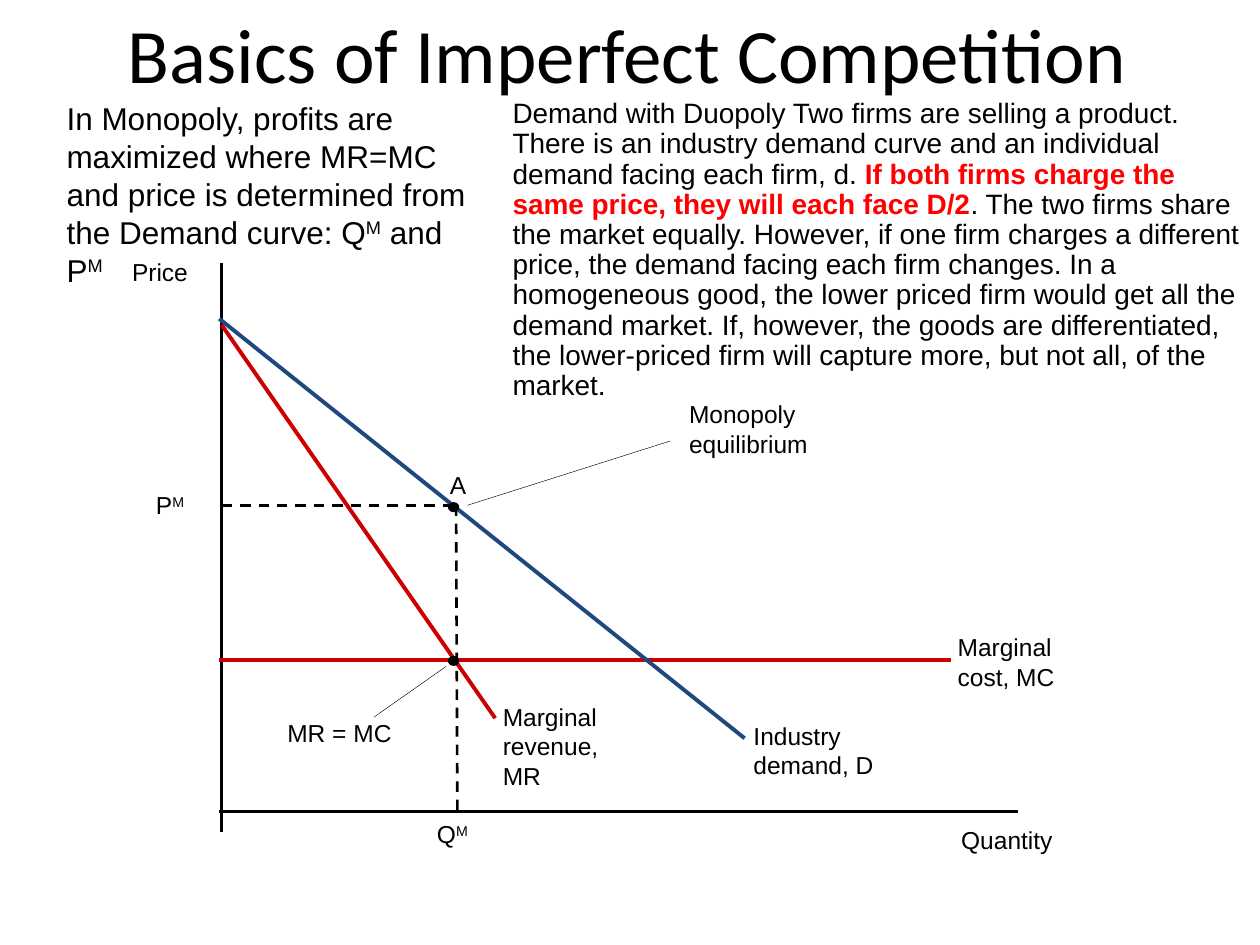
import pptx
import pptx.util
import pptx.dml.color
import pptx.enum.dml
import pptx.enum.shapes
import pptx.enum.text
import pptx.oxml

COLORS = {"ink": "000000", "paper": "FFFFFF", "cost": "CC0000",
          "demand": "1F497D", "accent": "FF0000"}
ALIGN = pptx.enum.text.PP_ALIGN
ANCHOR = pptx.enum.text.MSO_ANCHOR
SHAPE = pptx.enum.shapes.MSO_SHAPE
SUPERSCRIPT = {"baseline": 30000}


def color(name):
    return pptx.dml.color.RGBColor.from_string(COLORS[name])


def write(frame, text, size=14, font="Arial", align=ALIGN.LEFT, anchor=ANCHOR.TOP,
          inset=(0, 0), spacing=None):
    frame.word_wrap = True
    frame.vertical_anchor = anchor
    frame.margin_left = frame.margin_right = pptx.util.Inches(inset[0])
    frame.margin_top = frame.margin_bottom = pptx.util.Inches(inset[1])
    paragraph = frame.paragraphs[0]
    paragraph.alignment = align
    if spacing:
        paragraph.line_spacing = spacing
    pieces = [(text, {})] if isinstance(text, str) else text
    for words, style in pieces:
        run = paragraph.add_run()
        run.text = words
        run.font.name = font
        run.font.size = pptx.util.Pt(size)
        run.font.bold = style.get("bold", False)
        run.font.color.rgb = color(style.get("color", "ink"))
        if "baseline" in style:
            run.font._element.set("baseline", str(style["baseline"]))


class Canvas:
    padding = (0.1, 0.05)

    def __init__(self, presentation):
        self.width = presentation.slide_width
        self.height = presentation.slide_height
        self.slide = presentation.slides.add_slide(presentation.slide_layouts[6])

    def across(self, percent):
        return round(self.width * percent / 100)

    def down(self, percent):
        return round(self.height * percent / 100)

    def area(self, left, top, width, height):
        return self.across(left), self.down(top), self.across(width), self.down(height)

    def text(self, box, text, **style):
        shape = self.slide.shapes.add_textbox(*self.area(*box))
        write(shape.text_frame, text, inset=self.padding, **style)

    def block(self, kind, box, fill, line, weight):
        shape = self.slide.shapes.add_shape(kind, *self.area(*box))
        shape.shadow.inherit = False
        if fill:
            shape.fill.solid()
            shape.fill.fore_color.rgb = color(fill)
        else:
            shape.fill.background()
        if line:
            shape.line.color.rgb = color(line)
            shape.line.width = pptx.util.Pt(weight)
        else:
            shape.line.fill.background()
        return shape

    def label(self, box, text, fill="paper", line="paper", weight=0.75, **style):
        shape = self.block(SHAPE.RECTANGLE, box, fill, line, weight)
        write(shape.text_frame, text, **style)

    def dot(self, left, top):
        self.block(SHAPE.OVAL, (left, top, 0.8, 0.93), "ink", "ink", 0.75)

    def line(self, start, end, weight=1.5, stroke="ink", dashed=False):
        connector = self.slide.shapes.add_connector(
            pptx.enum.shapes.MSO_CONNECTOR.STRAIGHT,
            self.across(start[0]), self.down(start[1]),
            self.across(end[0]), self.down(end[1]))
        connector.line.color.rgb = color(stroke)
        connector.line.width = pptx.util.Pt(weight)
        if dashed:
            connector.line.dash_style = pptx.enum.dml.MSO_LINE.DASH
        effects = pptx.oxml.parse_xml(
            '<a:effectLst xmlns:a="http://schemas.openxmlformats.org/drawingml/2006/main"/>')
        connector._element.spPr.append(effects)


def draw_axes_and_guides(canvas):
    axis, price, output = 17.6, 53.47, 36.2
    canvas.label((33.7, 86, 7.3, 4.8), [("Q", {}), ("M", SUPERSCRIPT)],
                 weight=1.5, inset=canvas.padding)
    canvas.line((output, price), (36.3, 85.73), dashed=True)
    canvas.line((axis, price), (output, price), dashed=True)
    canvas.label((10.5, 51.87, 6, 4.8), [("P", {}), ("M", SUPERSCRIPT)],
                 weight=1.5, align=ALIGN.CENTER)
    canvas.line((axis, 88), (axis, 27.87))
    canvas.line((17.4, 85.87), (80.8, 85.87))
    canvas.label((9.1, 27.2, 7.2, 4.8), "Price", align=ALIGN.CENTER)
    canvas.label((75.3, 86.67, 11, 4.8), "Quantity", inset=canvas.padding)


def draw_curves(canvas):
    canvas.line((17.4, 69.87), (75.5, 69.87), 2.25, "cost")
    canvas.label((76, 66.93, 9.9, 5.87), "Marginal cost, MC")
    canvas.line((17.4, 33.73), (59.1, 78.13), 2.25, "demand")
    canvas.line((17.6, 34.4), (39.3, 76), 2.25, "cost")
    canvas.label((59.8, 76.27, 13.2, 6.93), "Industry demand, D")
    canvas.label((39.9, 74.27, 9.9, 8.93), "Marginal revenue, MR", fill=None)


def draw_equilibrium(canvas):
    canvas.dot(35.6, 53.2)
    canvas.label((35.7, 49.73, 3.3, 2.8), "A", fill=None)
    canvas.line((37.1, 53.47), (53.2, 46.67), 0.25)
    canvas.label((53.7, 41.6, 19.8, 4.13), "Monopoly equilibrium", line=None,
                 inset=canvas.padding)
    canvas.dot(35.6, 69.47)
    canvas.line((29.7, 75.87), (35.4, 70.53), 0.25)
    canvas.label((22.8, 76, 10.2, 4.53), "MR = MC", fill=None)


def write_explanations(canvas):
    canvas.text((4.3, 9.87, 34.1, 21.33), [
        ("In Monopoly, profits are maximized where MR=MC and price is determined "
         "from the Demand curve: Q", {}),
        ("M", SUPERSCRIPT), (" and P", {}), ("M", SUPERSCRIPT)], size=18)
    canvas.text((39.7, 9.87, 60.3, 33.6), [
        ("Demand with Duopoly Two firms are selling a product. There is an industry "
         "demand curve and an individual demand facing each firm, d. ", {}),
        ("If both firms charge the same price, they will each face D/2",
         {"color": "accent", "bold": True}),
        (". The two firms share the market equally. However, if one firm charges a "
         "different price, the demand facing each firm changes. In a homogeneous good, "
         "the lower priced firm would get all the demand market. If, however, the goods "
         "are differentiated, the lower-priced firm will capture more, but not all, of "
         "the market.", {})], size=16, spacing=0.9)


def main():
    presentation = pptx.Presentation()
    presentation.slide_width = pptx.util.Inches(10)
    presentation.slide_height = pptx.util.Inches(7.5)
    canvas = Canvas(presentation)
    canvas.text((4.8, 1.2, 90, 8.8), "Basics of Imperfect Competition", size=44,
                font="Calibri", align=ALIGN.CENTER, anchor=ANCHOR.MIDDLE)
    draw_axes_and_guides(canvas)
    draw_curves(canvas)
    draw_equilibrium(canvas)
    write_explanations(canvas)
    presentation.save("out.pptx")


if __name__ == "__main__":
    main()
